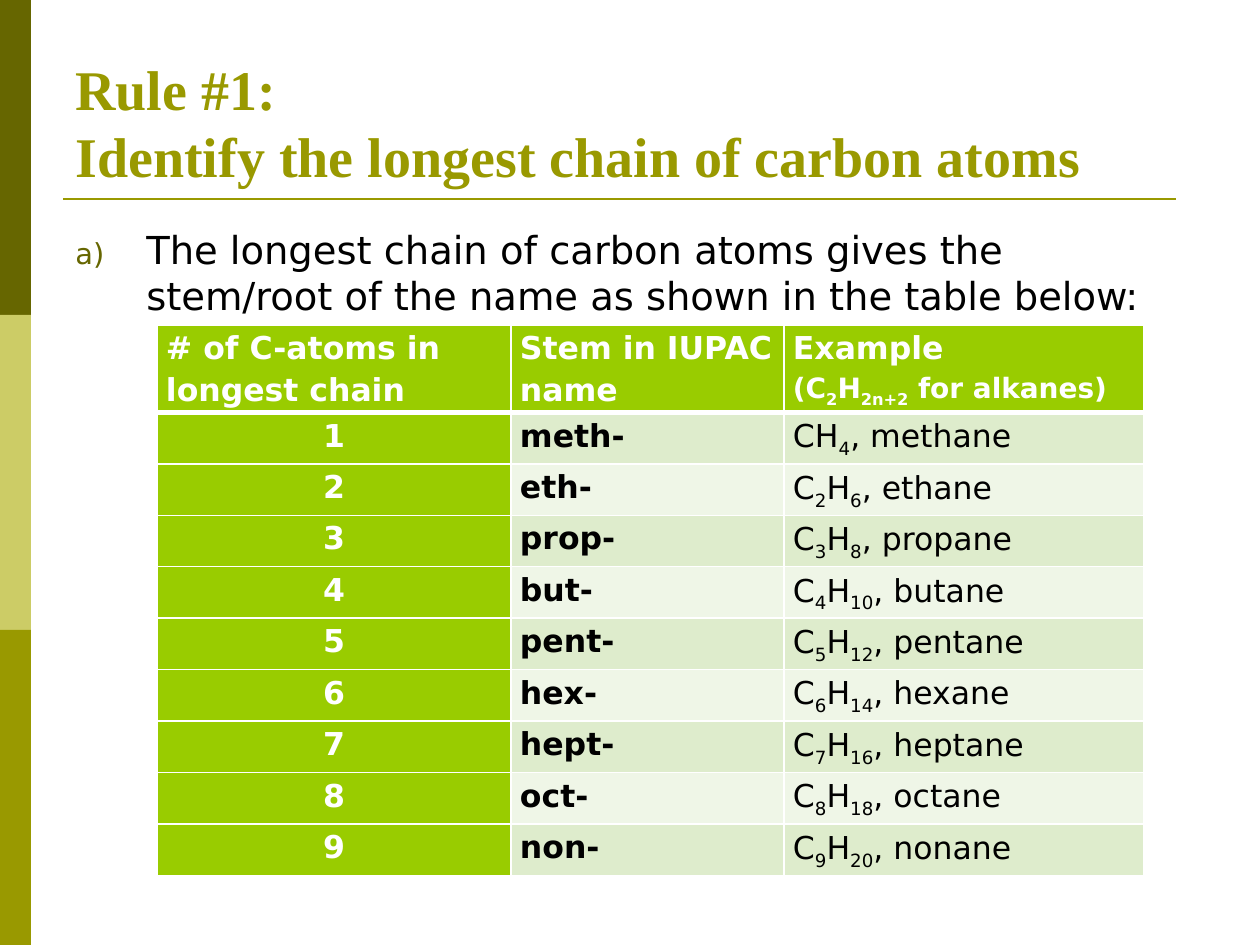
import pptx
import pptx.util
import pptx.dml.color
import pptx.enum.shapes
import pptx.enum.text
import pptx.oxml
import pptx.oxml.ns

RGBColor = pptx.dml.color.RGBColor
Align = pptx.enum.text.PP_ALIGN
Anchor = pptx.enum.text.MSO_ANCHOR

WHITE = RGBColor(0xFF, 0xFF, 0xFF)
BLACK = RGBColor(0x00, 0x00, 0x00)
DARK_OLIVE = RGBColor(0x66, 0x66, 0x00)
OLIVE = RGBColor(0x99, 0x99, 0x00)
PALE_OLIVE = RGBColor(0xCC, 0xCC, 0x66)
GREEN = RGBColor(0x99, 0xCC, 0x00)
BANDS = (RGBColor(0xDE, 0xEC, 0xCC), RGBColor(0xEF, 0xF6, 0xE7))

SANS = "DejaVu Sans"
SERIF = "Times New Roman"
EMU_PER_PX = 914400 / 126

COLUMN_WIDTHS = (354, 273, 360)
HEADER_HEIGHT = 87
BODY_HEIGHT = 463
STEMS = ("meth", "eth", "prop", "but", "pent", "hex", "hept", "oct", "non")

TITLE_FORMAT = {"name": SERIF, "size": 32, "bold": True, "color": OLIVE}
BODY_FORMAT = {"name": SANS, "size": 22, "bold": False, "color": BLACK}
HEADER_FORMAT = {"name": SANS, "size": 18, "bold": True, "color": WHITE}
STEM_FORMAT = HEADER_FORMAT | {"color": BLACK}
EXAMPLE_FORMAT = STEM_FORMAT | {"bold": False}


def emu(pixels):
    """Turn pixels into EMU."""
    return pptx.util.Emu(round(pixels * EMU_PER_PX))


def set_values(target, values):
    """Set each named attribute of the target."""
    for name, value in values.items():
        setattr(target, name, value)


def add_spans(para, text, style):
    """Add text in which underscores enclose subscripts."""
    for index, piece in enumerate(text.split("_")):
        if not piece:
            continue
        span = para.add_run()
        span.text = piece
        set_values(span.font, {"name": style["name"], "bold": style["bold"],
                               "size": pptx.util.Pt(style["size"])})
        span.font.color.rgb = style["color"]
        if index % 2:
            span.font._element.set("baseline", "-25000")


def add_text(page, place, lines, style, anchor):
    """Add a wrapped text box with line breaks and return its paragraph."""
    box = page.shapes.add_textbox(*map(emu, place))
    set_values(box.text_frame, {"word_wrap": True, "vertical_anchor": anchor})
    para = box.text_frame.paragraphs[0]
    for index, line in enumerate(lines):
        if index:
            para.add_line_break()
        add_spans(para, line, style)
    return para


def add_letter_bullet(para, indent):
    """Give the paragraph a hanging a) number."""
    para.space_before = pptx.util.Pt(4.4)
    properties = para._p.get_or_add_pPr()
    properties.set("marL", str(emu(indent)))
    properties.set("indent", str(-emu(indent)))
    namespace = pptx.oxml.ns.nsdecls("a")
    for markup in (
        f'<a:buClr {namespace}><a:srgbClr val="{DARK_OLIVE}"/></a:buClr>',
        f'<a:buSzPct {namespace} val="75000"/>',
        f'<a:buFont {namespace} typeface="{SANS}"/>',
        f'<a:buAutoNum {namespace} type="alphaLcParenR"/>',
    ):
        properties.append(pptx.oxml.parse_xml(markup))


def add_band(page, place, color):
    """Add a plain filled rectangle."""
    band = page.shapes.add_shape(
        pptx.enum.shapes.MSO_SHAPE.RECTANGLE, *map(emu, place))
    band.shadow.inherit = False
    band.fill.solid()
    band.fill.fore_color.rgb = color
    band.line.fill.background()


def add_rule(page, ends, color):
    """Add a straight line without a shadow."""
    rule = page.shapes.add_connector(
        pptx.enum.shapes.MSO_CONNECTOR.STRAIGHT, *map(emu, ends))
    rule.line.color.rgb = color
    rule.line.width = pptx.util.Pt(1.5)
    rule._element.spPr.append(pptx.oxml.parse_xml(
        f'<a:effectLst {pptx.oxml.ns.nsdecls("a")}/>'))


def set_borders(cell, top, bottom):
    """Draw white borders, with top and bottom widths in points."""
    properties = cell._tc.get_or_add_tcPr()
    widths = {"lnL": 1, "lnR": 1, "lnT": top, "lnB": bottom}
    for index, (side, width) in enumerate(widths.items()):
        properties.insert(index, pptx.oxml.parse_xml(
            f'<a:{side} {pptx.oxml.ns.nsdecls("a")} w="{pptx.util.Pt(width)}">'
            f'<a:solidFill><a:srgbClr val="{WHITE}"/></a:solidFill></a:{side}>'))


def fill_cell(cell, parts, color, align=Align.LEFT, top=1, bottom=1):
    """Fill a cell with lines of text, each with its own format."""
    set_values(cell, {"margin_left": emu(9), "margin_right": emu(9),
                      "margin_top": 0, "margin_bottom": 0})
    cell.fill.solid()
    cell.fill.fore_color.rgb = color
    set_borders(cell, top, bottom)
    para = cell.text_frame.paragraphs[0]
    set_values(para, {"alignment": align, "line_spacing": 1.15})
    for index, (text, style) in enumerate(parts):
        if index:
            para.add_line_break()
        add_spans(para, text, style)


def add_stem_table(page, left, top):
    """Add the table of stems with their alkane examples."""
    table = page.shapes.add_table(
        len(STEMS) + 1, len(COLUMN_WIDTHS), emu(left), emu(top),
        emu(sum(COLUMN_WIDTHS)), emu(HEADER_HEIGHT + BODY_HEIGHT)).table
    for column, width in zip(table.columns, COLUMN_WIDTHS):
        column.width = emu(width)
    for row in table.rows:
        row.height = emu(BODY_HEIGHT / len(STEMS))
    table.rows[0].height = emu(HEADER_HEIGHT)
    headers = (
        [("# of C-atoms in longest chain", HEADER_FORMAT)],
        [("Stem in IUPAC name", HEADER_FORMAT)],
        [("Example ", HEADER_FORMAT),
         ("(C_2_H_2n+2_ for alkanes)", HEADER_FORMAT | {"size": 16})],
    )
    for column, parts in enumerate(headers):
        fill_cell(table.cell(0, column), parts, GREEN, bottom=3)
    for count, stem in enumerate(STEMS, 1):
        carbon = "C" if count == 1 else f"C_{count}_"
        example = f"{carbon}H_{2 * count + 2}_, {stem}ane"
        band = BANDS[(count - 1) % 2]
        line = 3 if count == 1 else 1
        fill_cell(table.cell(count, 0), [(str(count), HEADER_FORMAT)],
                  GREEN, Align.CENTER, top=line)
        fill_cell(table.cell(count, 1), [(f"{stem}-", STEM_FORMAT)], band, top=line)
        fill_cell(table.cell(count, 2), [(example, EXAMPLE_FORMAT)], band, top=line)


def main():
    """Build and save the slide."""
    deck = pptx.Presentation()
    set_values(deck, {"slide_width": emu(1260), "slide_height": emu(945)})
    page = deck.slides.add_slide(deck.slide_layouts[6])
    for index, color in enumerate((DARK_OLIVE, PALE_OLIVE, OLIVE)):
        add_band(page, (0, 315 * index, 31, 315), color)
    add_rule(page, (63, 199, 1176, 199), OLIVE)
    add_text(page, (63, 38, 1134, 157),
             ("Rule #1: ", "Identify the longest chain of carbon atoms"),
             TITLE_FORMAT, Anchor.BOTTOM)
    para = add_text(page, (63, 220, 1134, 105),
                    ("The longest chain of carbon atoms gives the stem/root "
                     "of the name as shown in the table below:",),
                    BODY_FORMAT, Anchor.TOP)
    add_letter_bullet(para, 71)
    add_stem_table(page, 157, 325)
    deck.save("out.pptx")


if __name__ == "__main__":
    main()
